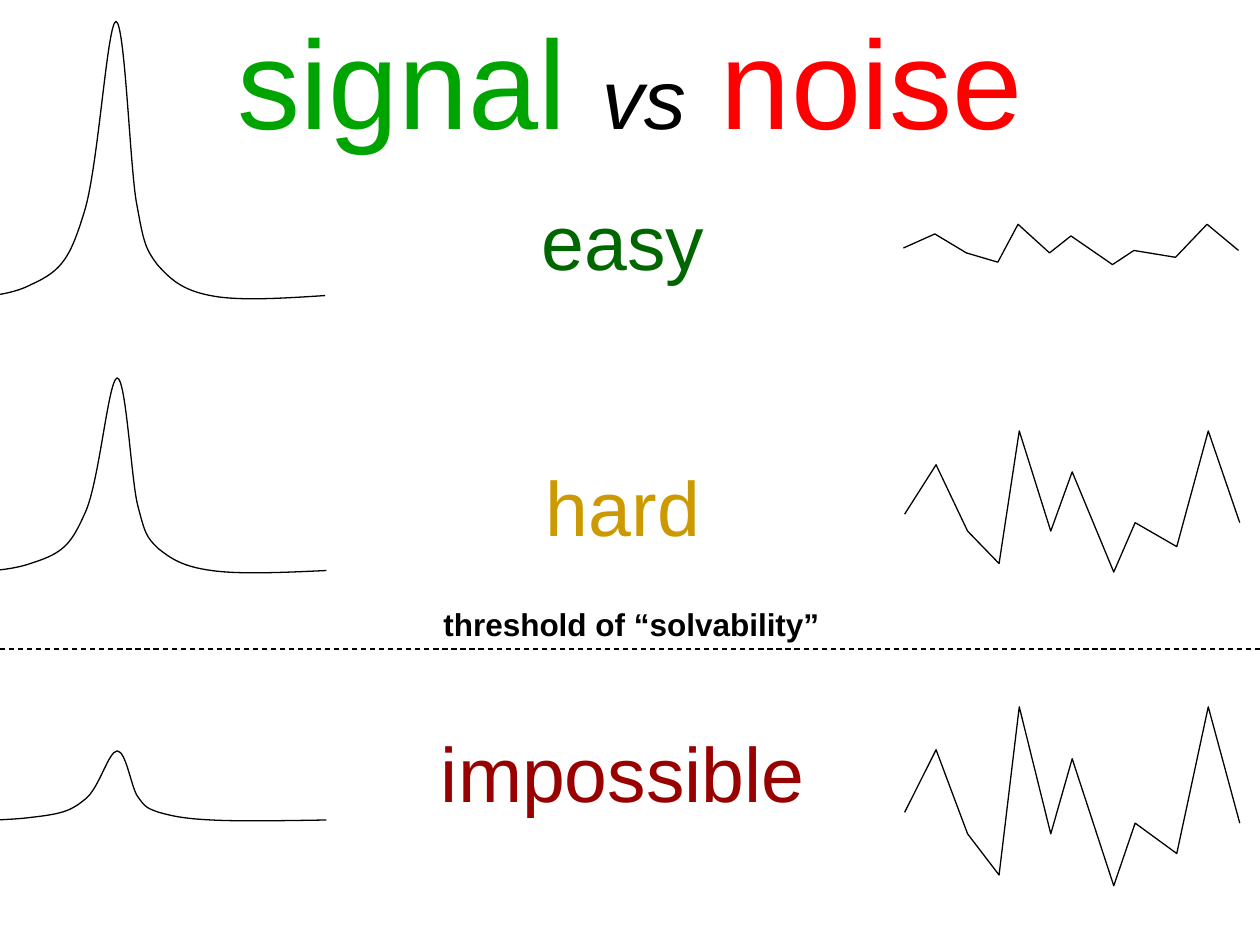
from typing import NamedTuple

from lxml.etree import SubElement
from pptx import Presentation
from pptx.dml.color import RGBColor
from pptx.enum.dml import MSO_LINE as Dash
from pptx.enum.shapes import MSO_CONNECTOR as Link
from pptx.enum.text import MSO_ANCHOR as Anchor, PP_ALIGN as Align
from pptx.oxml.ns import qn
from pptx.util import Inches, Pt

BLACK = RGBColor(0, 0, 0)
GREEN = RGBColor(0, 0xA4, 0)
RED = RGBColor(0xFF, 0, 0)
DEEP = RGBColor(0, 0x66, 0)
GOLD = RGBColor(0xCC, 0x99, 0)
MAROON = RGBColor(0x99, 0, 0)
FONT = "Arial"

Point = tuple[float, float]


class Level(NamedTuple):
    word: str
    color: RGBColor
    peak: tuple[float, float, float]
    noise: tuple[float, float, float]


class Part(NamedTuple):
    text: str
    size: int
    color: RGBColor
    slant: bool = False


LEVELS = [
    Level("easy", DEEP, (-0.83, 0.17, 2.22), (7.17, 1.78, 0.32)),
    Level("hard", GOLD, (-0.82, 3, 1.56), (7.18, 3.42, 1.12)),
    Level("impossible", MAROON, (-0.82, 5.96, 0.56), (7.18, 5.61, 1.42)),
]
TITLE = [
    Part("signal ", 72, GREEN),
    Part("vs", 48, BLACK, True),
    Part(" ", 72, BLACK),
    Part("noise", 72, RED),
]
PEAK = [
    (0, 0.98),
    (0.41, 0.99), (0.83, 1), (1.08, 0.94),
    (1.33, 0.89), (1.39, 0.84), (1.5, 0.68),
    (1.61, 0.52), (1.68, 0.01), (1.75, 0),
    (1.82, 0), (1.86, 0.5), (1.91, 0.64),
    (1.97, 0.79), (1.98, 0.81), (2.08, 0.87),
    (2.18, 0.92), (2.27, 0.96), (2.5, 0.98),
    (2.72, 1), (3.07, 0.99), (3.41, 0.98),
]
NOISE = [
    (0, 0.59), (0.25, 0.24), (0.5, 0.71), (0.75, 0.94),
    (0.91, 0), (1.16, 0.71), (1.33, 0.29), (1.66, 1),
    (1.83, 0.65), (2.16, 0.82), (2.41, 0), (2.66, 0.65),
]


def draw(shapes, points: list[Point], place: tuple[float, float, float], curved: bool = False) -> None:
    left, top, height = place
    spots = [(Inches(left + x), Inches(top + y * height)) for x, y in points]
    pen = shapes.build_freeform(*spots[0])
    pen.add_line_segments(spots[1:], close=False)
    trace = pen.convert_to_shape()
    trace.shadow.inherit = False
    trace.fill.background()
    trace.line.color.rgb = BLACK
    trace.line.width = Pt(0.75)
    if curved:
        bend(trace)


def bend(trace) -> None:
    route = next(trace._element.iter(qn("a:path")))
    steps = route.findall(qn("a:lnTo"))
    for i in range(0, len(steps), 3):
        curve = SubElement(route, qn("a:cubicBezTo"))
        for step in steps[i:i + 3]:
            curve.append(step[0])
            route.remove(step)


def add_box(shapes, left: float, top: float, width: float, height: float, wrap: bool = True):
    box = shapes.add_textbox(Inches(left), Inches(top), Inches(width), Inches(height))
    box.text_frame.word_wrap = wrap
    return box.text_frame


def add_title(shapes) -> None:
    frame = add_box(shapes, 0.75, 0, 8.5, 1.25)
    frame.vertical_anchor = Anchor.MIDDLE
    para = frame.paragraphs[0]
    para.alignment = Align.CENTER
    para.font.name = FONT
    for part in TITLE:
        run = para.add_run()
        run.text = part.text
        run.font.size = Pt(part.size)
        run.font.color.rgb = part.color
        run.font.italic = part.slant


def add_words(shapes) -> None:
    frame = add_box(shapes, 3.06, 1.44, 3.77, 5.23)
    frame.margin_top = Inches(0.1)
    frame.text = "\n".join(level.word for level in LEVELS)
    for i, (para, level) in enumerate(zip(frame.paragraphs, LEVELS)):
        para.alignment = Align.CENTER
        para.space_before = Pt(99 if i else 0)
        para.font.name = FONT
        para.font.size = Pt(44)
        para.font.color.rgb = level.color


def add_limit(shapes) -> None:
    line = shapes.add_connector(Link.STRAIGHT, Inches(0), Inches(5.15), Inches(10), Inches(5.15))
    line.line.color.rgb = BLACK
    line.line.width = Pt(0.75)
    line.line.dash_style = Dash.DASH
    SubElement(line._element.spPr, qn("a:effectLst"))
    frame = add_box(shapes, 3.42, 4.75, 3.19, 0.4, wrap=False)
    para = frame.paragraphs[0]
    para.text = "threshold of “solvability”"
    para.font.name = FONT
    para.font.size = Pt(18)
    para.font.bold = True
    para.font.color.rgb = BLACK


def main() -> None:
    deck = Presentation()
    deck.slide_width, deck.slide_height = Inches(10), Inches(7.5)
    shapes = deck.slides.add_slide(deck.slide_layouts[6]).shapes
    add_title(shapes)
    for level in LEVELS:
        draw(shapes, NOISE, level.noise)
        draw(shapes, PEAK, level.peak, curved=True)
    add_words(shapes)
    add_limit(shapes)
    deck.save("out.pptx")


if __name__ == "__main__":
    main()
